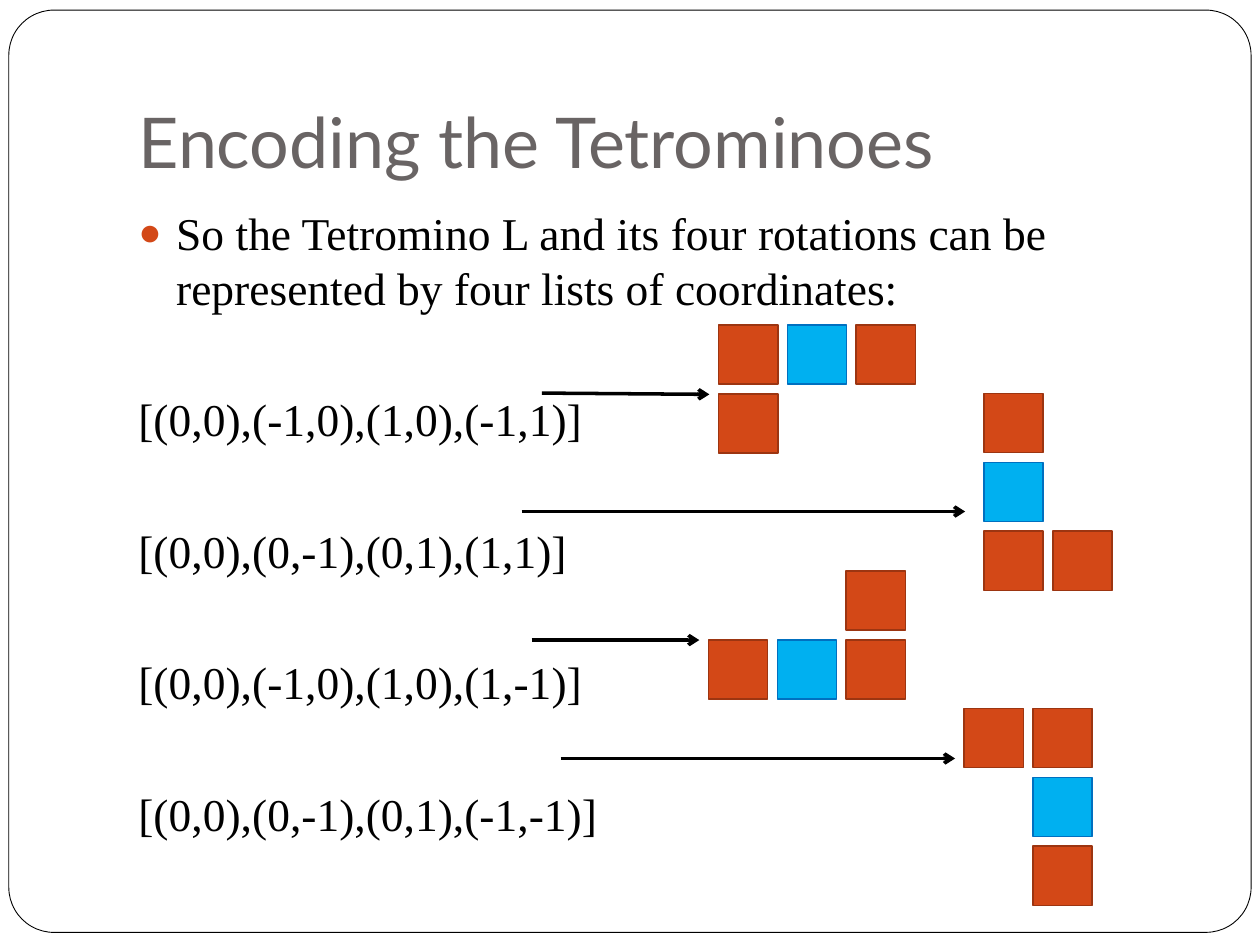
import pptx
import pptx.util
import pptx.dml.color
import pptx.enum.shapes
import pptx.enum.text
import pptx.oxml

Inches = pptx.util.Inches
Pt = pptx.util.Pt
RGBColor = pptx.dml.color.RGBColor
SHAPE = pptx.enum.shapes.MSO_SHAPE
ANCHOR = pptx.enum.text.MSO_ANCHOR

WHITE = RGBColor(0xFF, 0xFF, 0xFF)
BLACK = RGBColor(0, 0, 0)
GRAY = RGBColor(0x69, 0x64, 0x64)
ORANGE = RGBColor(0xD3, 0x48, 0x17)
DARK_ORANGE = RGBColor(0x9C, 0x35, 0x11)
BLUE = RGBColor(0x00, 0xB0, 0xF0)
DARK_BLUE = RGBColor(0x00, 0x70, 0xC0)

CELL, PITCH = 0.47, 0.547  # square size and grid step, inches

# Cells relative to the pivot, pivot position, arrow start and end
ROTATIONS = [
    ([(0, 0), (-1, 0), (1, 0), (-1, 1)], (6.25, 2.58), (4.3, 3.12), (5.63, 3.13)),
    ([(0, 0), (0, -1), (0, 1), (1, 1)], (7.81, 3.67), (4.14, 4.06), (7.66, 4.06)),
    ([(0, 0), (-1, 0), (1, 0), (1, -1)], (6.17, 5.08), (4.22, 5.08), (5.55, 5.08)),
    ([(0, 0), (0, -1), (0, 1), (-1, -1)], (8.2, 6.17), (4.45, 6.02), (7.58, 6.02)),
]


def add_xml(parent, tag, **attrs):
    el = pptx.oxml.parse_xml(
        f'<a:{tag} xmlns:a="http://schemas.openxmlformats.org/drawingml/2006/main"/>')
    for name, value in attrs.items():
        el.set(name, str(value))
    parent.append(el)
    return el


def write(p, text, size=26, font="Times New Roman", color=BLACK, before=0):
    p.space_before = Pt(before)
    r = p.add_run()
    r.text = text
    r.font.size = Pt(size)
    r.font.name = font
    r.font.color.rgb = color


def add_box(s, kind, box, fill, line, width):
    sp = s.shapes.add_shape(kind, *map(Inches, box))
    sp.shadow.inherit = False
    sp.fill.solid()
    sp.fill.fore_color.rgb = fill
    sp.line.color.rgb = line
    sp.line.width = Pt(width)
    return sp


def add_frame(s, box):
    sp = add_box(s, SHAPE.ROUNDED_RECTANGLE, box, WHITE, BLACK, 0.5)
    sp.adjustments[0] = 0.049
    # Send the frame behind the title
    s.shapes._spTree.remove(sp._element)
    s.shapes._spTree.insert(2, sp._element)


def add_title(s, box, text):
    sp = s.shapes.title
    sp.left, sp.top, sp.width, sp.height = map(Inches, box)
    tf = sp.text_frame
    tf.vertical_anchor = ANCHOR.BOTTOM
    tf.margin_bottom = Inches(0.1)
    p = tf.paragraphs[0]
    p.alignment = pptx.enum.text.PP_ALIGN.LEFT
    write(p, text, size=40, font="Lato", color=GRAY)


def add_body(s, box, intro, lines):
    tf = s.shapes.add_textbox(*map(Inches, box)).text_frame
    tf.word_wrap = True
    # Bulleted introduction
    p = tf.paragraphs[0]
    write(p, intro, before=5.8)
    pPr = p._p.get_or_add_pPr()
    pPr.set("marL", str(Inches(0.3)))
    pPr.set("indent", str(Inches(-0.3)))
    add_xml(add_xml(pPr, "buClr"), "srgbClr", val=ORANGE)
    add_xml(pPr, "buSzPct", val=85000)
    add_xml(pPr, "buFont", typeface="Times New Roman")
    add_xml(pPr, "buChar", char="●")
    # Coordinate lists
    for line in lines:
        write(tf.add_paragraph(), line, before=44)


def add_tetromino(s, pivot, cells):
    for x, y in cells:
        fill, line = (BLUE, DARK_BLUE) if (x, y) == (0, 0) else (ORANGE, DARK_ORANGE)
        box = (pivot[0] + x * PITCH, pivot[1] + y * PITCH, CELL, CELL)
        add_box(s, SHAPE.RECTANGLE, box, fill, line, 1)


def add_arrow(s, start, end):
    c = s.shapes.add_connector(pptx.enum.shapes.MSO_CONNECTOR.STRAIGHT,
                               *map(Inches, start + end))
    c.line.color.rgb = BLACK
    c.line.width = Pt(2)
    add_xml(c.line._get_or_add_ln(), "tailEnd", type="arrow")
    add_xml(c._element.spPr, "effectLst")


def format_cells(cells):
    return "[" + ",".join(f"({x},{y})" for x, y in cells) + "]"


def main():
    prs = pptx.Presentation()
    prs.slide_width, prs.slide_height = Inches(10), Inches(7.5)
    s = prs.slides.add_slide(prs.slide_layouts[5])
    add_frame(s, (0.07, 0.08, 9.86, 7.32))
    add_title(s, (1, 0.3, 8.5, 1.25), "Encoding the Tetrominoes")
    add_body(s, (1, 1.58, 8.5, 5),
             "So the Tetromino L and its four rotations can be "
             "represented by four lists of coordinates:",
             [format_cells(cells) for cells, *_ in ROTATIONS])
    for cells, pivot, start, end in ROTATIONS:
        add_tetromino(s, pivot, cells)
        add_arrow(s, start, end)
    prs.save("out.pptx")


if __name__ == "__main__":
    main()
